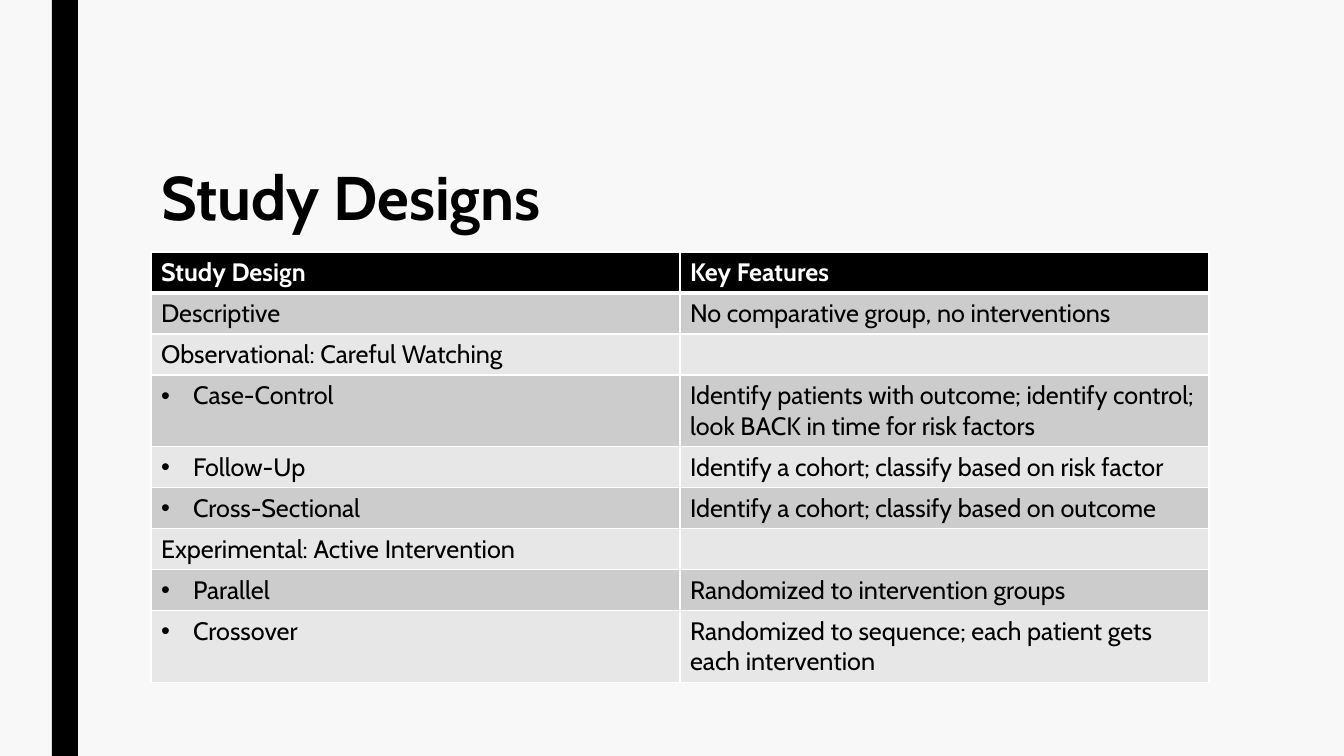
import pptx
import pptx.dml.color
import pptx.enum.shapes
import pptx.enum.text
import pptx.oxml
import pptx.oxml.ns
import pptx.util

RGBColor = pptx.dml.color.RGBColor

# Content: (is a bulleted sub-item, study design, key features)
TITLE = "Study Designs"
HEADER = (False, "Study Design", "Key Features")
DESIGNS = [
    (False, "Descriptive", "No comparative group, no interventions"),
    (False, "Observational: Careful Watching", ""),
    (True, "Case-Control",
     "Identify patients with outcome; identify control; look BACK in time for risk factors"),
    (True, "Follow-Up", "Identify a cohort; classify based on risk factor"),
    (True, "Cross-Sectional", "Identify a cohort; classify based on outcome"),
    (False, "Experimental: Active Intervention", ""),
    (True, "Parallel", "Randomized to intervention groups"),
    (True, "Crossover", "Randomized to sequence; each patient gets each intervention"),
]

# Style
FONT = "Cabin"
BLACK = RGBColor(0x00, 0x00, 0x00)
WHITE = RGBColor(0xFF, 0xFF, 0xFF)
PAPER = RGBColor(0xF8, 0xF8, 0xF8)
BANDS = (RGBColor(0xE7, 0xE7, 0xE7), RGBColor(0xCC, 0xCC, 0xCC))
THIN, THICK = 1, 3

# Lengths in px
SLIDE_WIDTH, SLIDE_HEIGHT = 1344, 756
BAR_LEFT, BAR_WIDTH = 52, 26
LEFT, WIDTH = 151, 1058
TITLE_TOP, TITLE_HEIGHT = 76, 163
TABLE_TOP, ROW_HEIGHT = 252, 41
BULLET_INDENT = 32


def px(length):
    return pptx.util.Emu(round(length * 914400 / 100.8))


def style_text(paragraph, size, color, bold):
    font = paragraph.font
    font.name = FONT
    font.size = pptx.util.Pt(size)
    font.bold = bold
    font.color.rgb = color


def add_bullet(paragraph):
    properties = paragraph._p.get_or_add_pPr()
    properties.set("marL", str(px(BULLET_INDENT)))
    properties.set("indent", str(-px(BULLET_INDENT)))
    namespace = pptx.oxml.ns.nsdecls("a")
    bullet_parts = ('<a:buFont %s typeface="Arial"/>', '<a:buChar %s char="•"/>')
    for position, part in enumerate(bullet_parts):
        properties.insert(position, pptx.oxml.parse_xml(part % namespace))


def add_borders(cell, top, bottom):
    properties = cell._tc.get_or_add_tcPr()
    for side, points in (("L", THIN), ("R", THIN), ("T", top), ("B", bottom)):
        properties.append(pptx.oxml.parse_xml(
            f'<a:ln{side} {pptx.oxml.ns.nsdecls("a")} w="{pptx.util.Pt(points)}">'
            f'<a:solidFill><a:srgbClr val="{WHITE}"/></a:solidFill></a:ln{side}>'))


def add_bar(page):
    bar = page.shapes.add_shape(
        pptx.enum.shapes.MSO_SHAPE.RECTANGLE,
        px(BAR_LEFT), 0, px(BAR_WIDTH), px(SLIDE_HEIGHT))
    bar.shadow.inherit = False
    bar.fill.solid()
    bar.fill.fore_color.rgb = BLACK
    bar.line.fill.background()


def fill_title(page):
    title = page.shapes.title
    title.left, title.top = px(LEFT), px(TITLE_TOP)
    title.width, title.height = px(WIDTH), px(TITLE_HEIGHT)
    frame = title.text_frame
    frame.text = TITLE
    frame.auto_size = pptx.enum.text.MSO_AUTO_SIZE.NONE
    frame.vertical_anchor = pptx.enum.text.MSO_ANCHOR.BOTTOM
    paragraph = frame.paragraphs[0]
    paragraph.alignment = pptx.enum.text.PP_ALIGN.LEFT
    paragraph.line_spacing = 0.89
    style_text(paragraph, 44, BLACK, True)


def add_design_table(page):
    rows = [HEADER, *DESIGNS]
    table = page.shapes.add_table(
        len(rows), 2, px(LEFT), px(TABLE_TOP),
        px(WIDTH), px(ROW_HEIGHT * len(rows))).table
    for row_index, (is_sub_item, *texts) in enumerate(rows):
        is_header = row_index == 0
        table.rows[row_index].height = px(ROW_HEIGHT)
        for column_index, text in enumerate(texts):
            cell = table.cell(row_index, column_index)
            add_borders(cell, THICK if row_index == 1 else THIN,
                        THICK if is_header else THIN)
            cell.fill.solid()
            cell.fill.fore_color.rgb = BLACK if is_header else BANDS[row_index % 2]
            cell.text = text
            paragraph = cell.text_frame.paragraphs[0]
            style_text(paragraph, 18, WHITE if is_header else BLACK, is_header)
            if is_sub_item and column_index == 0:
                add_bullet(paragraph)


def main():
    deck = pptx.Presentation()
    deck.slide_width, deck.slide_height = px(SLIDE_WIDTH), px(SLIDE_HEIGHT)
    page = deck.slides.add_slide(deck.slide_layouts.get_by_name("Title Only"))
    page.background.fill.solid()
    page.background.fill.fore_color.rgb = PAPER
    add_bar(page)
    fill_title(page)
    add_design_table(page)
    deck.save("out.pptx")


if __name__ == "__main__":
    main()
